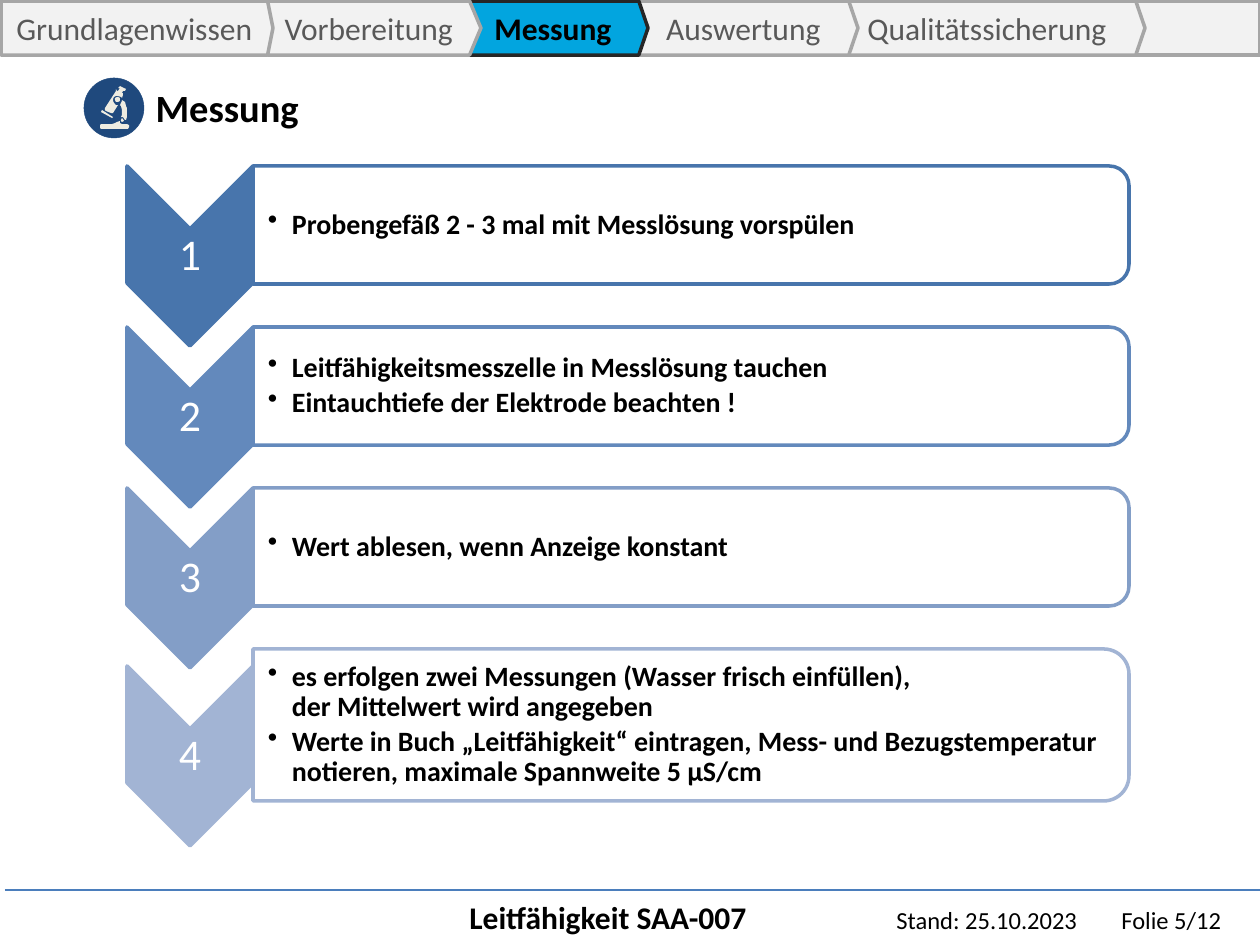
from dataclasses import dataclass

from lxml.etree import SubElement
from pptx import Presentation
from pptx.dml.color import RGBColor
from pptx.enum.shapes import MSO_CONNECTOR as Connector, MSO_SHAPE as Shape
from pptx.enum.text import MSO_ANCHOR as Anchor, PP_ALIGN as Align
from pptx.oxml.ns import qn
from pptx.util import Pt

EMU_PER_PX = 914400 // 126


def px(length):
    """Turn whole px into EMU."""
    return length * EMU_PER_PX


@dataclass(frozen=True)
class Theme:
    """Colours and type sizes of the slide."""
    font: str = "Calibri"
    black: str = "000000"
    white: str = "FFFFFF"
    tab_fill: str = "F2F2F2"
    tab_line: str = "A6A6A6"
    tab_text: str = "595959"
    active_fill: str = "02A5DF"
    active_line: str = "262626"
    rule: str = "4B7EBC"
    badge: str = "1F497D"
    icon: str = "EEECE1"
    steps: tuple = ("4875AC", "6389BC", "839EC7", "A2B4D4")
    title_size: int = 22
    heading_size: int = 18
    number_size: int = 25
    body_size: int = 16
    note_size: int = 14


class SlideBuilder:
    """Draws the elements of one slide in one theme."""

    def __init__(self, theme, slide):
        self.theme = theme
        self.slide = slide
        self.shapes = slide.shapes

    def style_run(self, run, size, color, bold=False):
        """Format one run."""
        run.font.name = self.theme.font
        run.font.size = Pt(size)
        run.font.bold = bold
        run.font.color.rgb = RGBColor.from_string(color)

    def paint(self, shape, fill, line=None, width=2):
        """Give a shape its fill and outline."""
        shape.shadow.inherit = False
        shape.fill.solid()
        shape.fill.fore_color.rgb = RGBColor.from_string(fill)
        if line:
            shape.line.color.rgb = RGBColor.from_string(line)
            shape.line.width = Pt(width)
        else:
            shape.line.fill.background()
        return shape

    def shape(self, kind, left, top, width, height, fill, line, line_width=2):
        """Add a painted preset shape."""
        shape = self.shapes.add_shape(kind, px(left), px(top), px(width), px(height))
        return self.paint(shape, fill, line, line_width)

    def turned_shape(self, kind, left, top, width, height, fill, line):
        """Add a shape turned by 90 degrees that covers the given box."""
        shift = (width - height) // 2
        shape = self.shape(kind, left + shift, top - shift, height, width, fill, line)
        shape.rotation = 90
        return shape

    def text_box(self, left, top, width, height, margins=None, anchor=Anchor.TOP):
        """Add a wrapping text box and return its frame."""
        frame = self.shapes.add_textbox(px(left), px(top), px(width), px(height)).text_frame
        frame.word_wrap = True
        frame.vertical_anchor = anchor
        if margins:
            (frame.margin_left, frame.margin_top,
             frame.margin_right, frame.margin_bottom) = map(px, margins)
        return frame

    def title(self, text, left, top, width, height):
        """Place and format the title placeholder."""
        title = self.shapes.title
        title.left, title.top, title.width, title.height = map(px, (left, top, width, height))
        frame = title.text_frame
        frame.text = text
        frame.vertical_anchor = Anchor.TOP
        frame.paragraphs[0].alignment = Align.LEFT
        self.style_run(frame.paragraphs[0].runs[0], self.theme.title_size, self.theme.black, True)

    def nav_tab(self, label, left, width, tip, active):
        """Add one arrow of the navigation bar."""
        theme = self.theme
        fill, line, color = (
            (theme.active_fill, theme.active_line, theme.black) if active
            else (theme.tab_fill, theme.tab_line, theme.tab_text))
        arrow = self.shape(Shape.RIGHT_ARROW, left, 1, width, 54, fill, line)
        arrow.adjustments[0] = 1
        arrow.adjustments[1] = tip
        if label:
            arrow.text_frame.text = label
            arrow.text_frame.vertical_anchor = Anchor.MIDDLE
            paragraph = arrow.text_frame.paragraphs[0]
            paragraph.alignment = Align.CENTER
            self.style_run(paragraph.runs[0], theme.heading_size, color, active)

    def rule(self, left, right, y):
        """Add a thin horizontal line."""
        rule = self.shapes.add_connector(Connector.STRAIGHT, px(left), px(y), px(right), px(y))
        rule.line.color.rgb = RGBColor.from_string(self.theme.rule)
        rule.line.width = Pt(0.75)
        SubElement(rule.element.spPr, qn("a:effectLst"))

    def outline(self, contours, fill):
        """Add one freeform made of closed contours."""
        first, *others = contours
        builder = self.shapes.build_freeform(*first[0], scale=EMU_PER_PX)
        builder.add_line_segments(first[1:], close=True)
        for contour in others:
            builder.move_to(*contour[0])
            builder.add_line_segments(contour[1:], close=True)
        self.paint(builder.convert_to_shape(), fill)

    def step(self, number, bullets, color, chevron_top, panel_top, panel_height):
        """Add a numbered chevron with its panel of bullets."""
        theme = self.theme
        self.turned_shape(Shape.CHEVRON, 127, chevron_top, 126, 180, color, color)
        frame = self.text_box(127, chevron_top + 63, 126, 54, (3, 3, 3, 3), Anchor.MIDDLE)
        frame.text = str(number)
        digit = frame.paragraphs[0]
        digit.alignment = Align.CENTER
        digit.line_spacing = 0.9
        self.style_run(digit.runs[0], theme.number_size, theme.white)

        panel = self.turned_shape(
            Shape.ROUND_2_SAME_RECTANGLE, 253, panel_top, 876, panel_height, theme.white, color)
        white = panel.element.spPr.find(qn("a:solidFill"))[0]
        SubElement(white, qn("a:alpha"), val="90000")
        frame = self.text_box(
            253, panel_top + 6, 869, panel_height - 12, (15, 1, 1, 1), Anchor.MIDDLE)
        frame.text = "\n".join(bullets)
        for paragraph in frame.paragraphs:
            paragraph.level = 1
            paragraph.line_spacing = 0.9
            paragraph.space_after = Pt(2.4)
            properties = paragraph._p.get_or_add_pPr()
            properties.set("marL", str(px(24)))
            properties.set("indent", str(px(-24)))
            SubElement(properties, qn("a:buChar"), char="•")
            for run in paragraph.runs:
                self.style_run(run, theme.body_size, theme.black, True)

    def footer(self, name, details, stops):
        """Add the footer with its details at tab stops."""
        theme = self.theme
        paragraph = self.text_box(457, 892, 791, 50).paragraphs[0]
        tabs = SubElement(paragraph._p.get_or_add_pPr(), qn("a:tabLst"))
        for stop in stops:
            SubElement(tabs, qn("a:tab"), pos=str(px(stop)), algn="l")
        heading, note = paragraph.add_run(), paragraph.add_run()
        heading.text = name
        note.text = "".join(f"\t{detail}" for detail in details)
        self.style_run(heading, theme.heading_size, theme.black, True)
        self.style_run(note, theme.note_size, theme.black)


NAV_TABS = [
    ("", 1086, 174, 0), ("Qualitätssicherung", 838, 307, 0.17), ("Auswertung", 638, 220, 0.17),
    ("Messung", 467, 181, 0.17), ("Vorbereitung", 268, 213, 0.21), ("Grundlagenwissen", 1, 272, 0.1),
]
STEPS = [
    ["Probengefäß 2 - 3 mal mit Messlösung vorspülen"],
    ["Leitfähigkeitsmesszelle in Messlösung tauchen", "Eintauchtiefe der Elektrode beachten !"],
    ["Wert ablesen, wenn Anzeige konstant"],
    ["es erfolgen zwei Messungen (Wasser frisch einfüllen),\vder Mittelwert wird angegeben",
     "Werte in Buch „Leitfähigkeit“ eintragen, Mess- und Bezugstemperatur notieren, "
     "maximale Spannweite 5 µS/cm"],
]
MICROSCOPE = [
    [(127, 112), (127, 117), (126, 120), (125, 120), (123, 117), (121, 117), (122, 115), (122, 110),
     (121, 106), (120, 105), (122, 101), (122, 100), (125, 102), (126, 106), (127, 108)],
    [(122, 122), (124, 121), (123, 119), (122, 118), (121, 120), (121, 121)],
    [(117, 97), (115, 98), (115, 100), (116, 102), (118, 102), (120, 101), (120, 98), (118, 97)],
    [(127, 124), (122, 124), (120, 123), (120, 121), (117, 122), (115, 123), (112, 124), (101, 124),
     (100, 125), (100, 128), (101, 129), (128, 129), (129, 127), (129, 125)],
    [(113, 117), (102, 110), (101, 112), (112, 118)],
    [(106, 111), (111, 113), (113, 113), (118, 105), (116, 105), (114, 103), (113, 101), (113, 99),
     (114, 97), (116, 96), (118, 96), (121, 97), (122, 98), (123, 95), (123, 93), (122, 93),
     (123, 91), (125, 91), (126, 89), (120, 86), (118, 88), (120, 88), (118, 91), (117, 91),
     (116, 89), (116, 91), (105, 108), (105, 110)],
]


def main():
    """Build and save the slide."""
    deck = Presentation()
    deck.slide_width, deck.slide_height = px(1260), px(945)
    theme = Theme()
    page = SlideBuilder(theme, deck.slides.add_slide(deck.slide_layouts[5]))
    topic = "Messung"
    for label, left, width, tip in NAV_TABS:
        page.nav_tab(label, left, width, tip, label == topic)
    page.rule(5, 1260, 890)
    page.footer("Leitfähigkeit SAA-007", ["Stand: 25.10.2023", "Folie 5/12"], [427, 652])
    page.title(topic, 143, 78, 684, 59)
    page.shape(Shape.OVAL, 84, 78, 60, 60, theme.badge, theme.badge, 0.25)
    page.outline(MICROSCOPE, theme.icon)
    for index, (bullets, color) in enumerate(zip(STEPS, theme.steps)):
        panel_top = 166 + 161 * index
        panel_height = 152 if index == 3 else 118
        chevron_top = panel_top + (panel_height - 118) // 2
        page.step(index + 1, bullets, color, chevron_top, panel_top, panel_height)
    deck.save("out.pptx")


if __name__ == "__main__":
    main()
